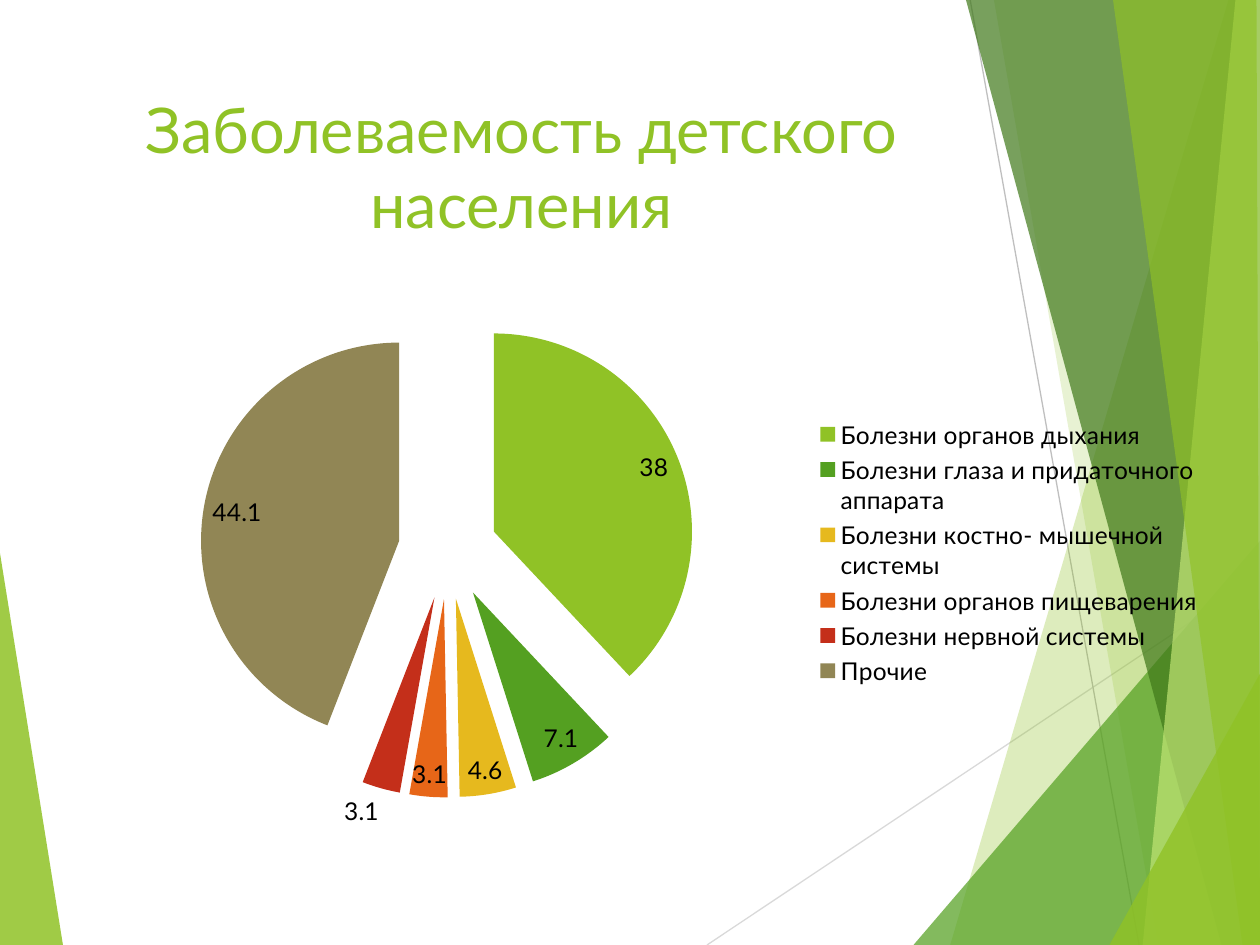
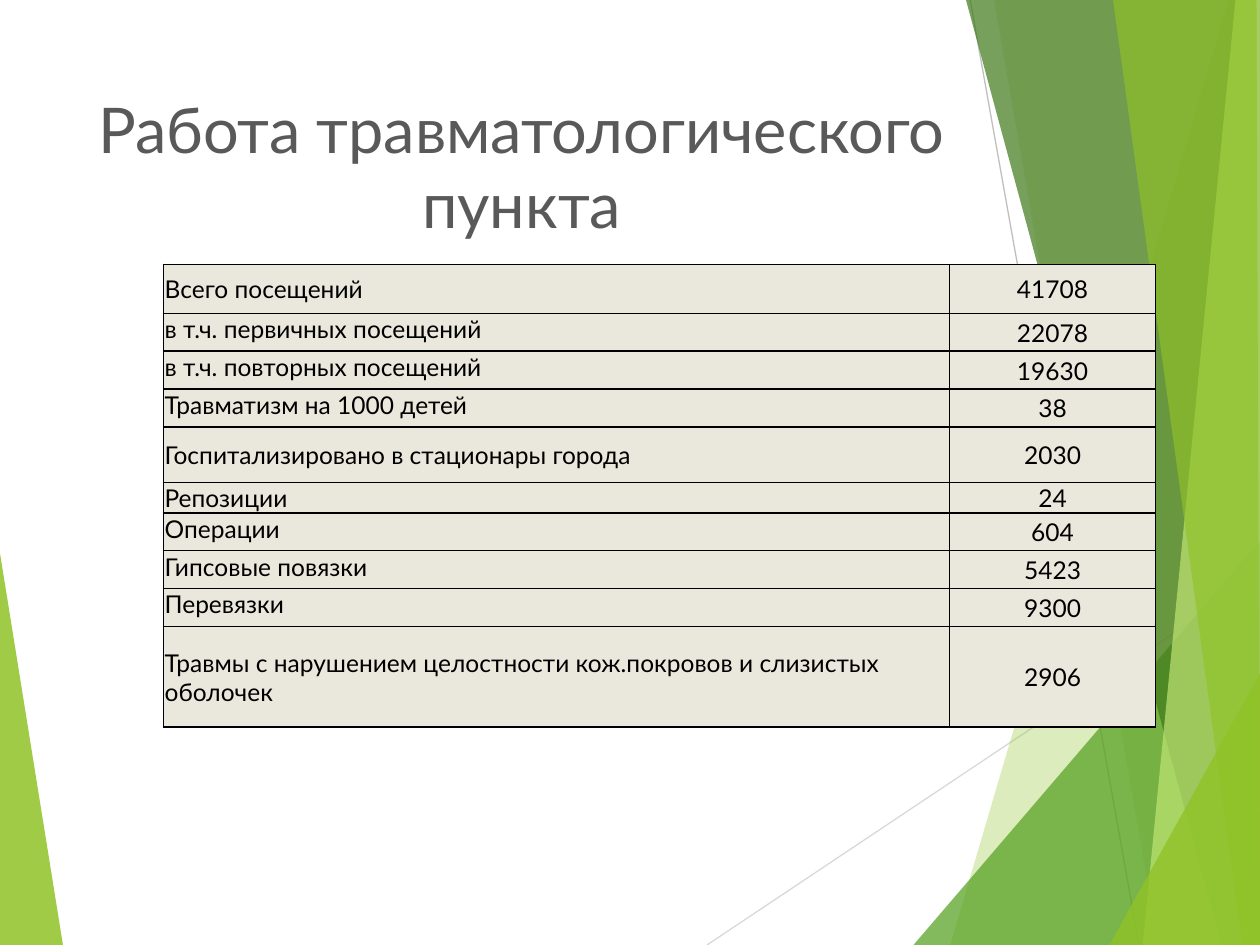
from typing import NamedTuple

from lxml.etree import SubElement
from pptx import Presentation
from pptx.chart.data import CategoryChartData
from pptx.dml.color import RGBColor
from pptx.enum.chart import XL_CHART_TYPE as ChartType
from pptx.enum.chart import XL_LABEL_POSITION as LabelPosition
from pptx.enum.chart import XL_LEGEND_POSITION as LegendPosition
from pptx.enum.text import MSO_ANCHOR as Anchor
from pptx.enum.text import PP_ALIGN as Align
from pptx.oxml import parse_xml
from pptx.oxml.ns import nsdecls, qn
from pptx.util import Pt

WIDTH, HEIGHT = 720, 540
FONT = "Lato"
LIME, GREEN, DARK_GREEN, PALE_LIME = "90C226", "54A021", "3F7819", "C0E474"
BLACK, GREY, CELL_FILL = "000000", "595959", "EAE8DC"
TITLE_SIZE, BODY_SIZE = 36, 14
TALL_ROW = 24
RIGHT_TOP, RIGHT_BOTTOM = (WIDTH, 0), (WIDTH, HEIGHT)


class Facet(NamedTuple):
    color: str
    opacity: int
    corners: list[tuple[float, float]]


class Ray(NamedTuple):
    color: str
    start: tuple[float, float]
    end: tuple[float, float]


class Disease(NamedTuple):
    name: str
    share: float
    color: str


class Indicator(NamedTuple):
    label: str
    value: str
    height: float = 21.6


LEFT_FACET = Facet(LIME, 85, [(0, 316), (35.5, HEIGHT), (0, HEIGHT)])
RAYS = [
    Ray("D9D9D9", (404, HEIGHT), (WIDTH, 329)),
    Ray("BFBFBF", (554.4, 0), (650.9, HEIGHT)),
]
RIGHT_FACETS = [
    Facet(LIME, 30, [(702, 0), (543, HEIGHT), RIGHT_BOTTOM, RIGHT_TOP]),
    Facet(LIME, 20, [(567.5, 0), (661.5, HEIGHT), RIGHT_BOTTOM, RIGHT_TOP]),
    Facet(GREEN, 72, [(522.5, HEIGHT), (WIDTH, 309), RIGHT_BOTTOM]),
    Facet(DARK_GREEN, 70, [(552, 0), (698.5, HEIGHT), RIGHT_BOTTOM, RIGHT_TOP]),
    Facet(PALE_LIME, 70, [(706.5, 0), (653, HEIGHT), RIGHT_BOTTOM, RIGHT_TOP]),
    Facet(LIME, 65, [(636, 0), (710, HEIGHT), RIGHT_BOTTOM, (718.5, 0)]),
    Facet(LIME, 80, [(634.5, HEIGHT), (WIDTH, 385), RIGHT_BOTTOM]),
]

DISEASES = [
    Disease("Болезни органов дыхания", 38, LIME),
    Disease("Болезни глаза и придаточного аппарата", 7.1, GREEN),
    Disease("Болезни костно- мышечной системы", 4.6, "E6B91E"),
    Disease("Болезни органов пищеварения", 3.1, "E76618"),
    Disease("Болезни нервной системы", 3.1, "C42F1A"),
    Disease("Прочие", 44.1, "918655"),
]

INDICATORS = [
    Indicator("Всего посещений", "41708", 28.1),
    Indicator("в т.ч. первичных посещений", "22078"),
    Indicator("в т.ч. повторных посещений", "19630"),
    Indicator("Травматизм на 1000 детей", "38"),
    Indicator("Госпитализировано в стационары города", "2030", 31.7),
    Indicator("Репозиции", "24", 16.6),
    Indicator("Операции", "604"),
    Indicator("Гипсовые повязки", "5423"),
    Indicator("Перевязки", "9300"),
    Indicator(
        "Травмы с нарушением целостности кож.покровов и слизистых оболочек",
        "2906", 57.6),
]


def rgb(color: str) -> RGBColor:
    return RGBColor.from_string(color)


def style_font(font, size: float, color: str) -> None:
    font.name = FONT
    font.size = Pt(size)
    font.color.rgb = rgb(color)


def add_facet(slide, facet: Facet) -> None:
    start, *others = facet.corners
    builder = slide.shapes.build_freeform(*start, scale=Pt(1))
    builder.add_line_segments(others)
    shape = builder.convert_to_shape()
    shape.shadow.inherit = False
    shape.line.fill.background()
    shape.fill.solid()
    shape.fill.fore_color.rgb = rgb(facet.color)
    fill_color = shape._element.spPr.find(f"{qn('a:solidFill')}/{qn('a:srgbClr')}")
    SubElement(fill_color, qn("a:alpha"), val=str(facet.opacity * 1000))


def add_ray(slide, ray: Ray) -> None:
    ends = [Pt(length) for length in (*ray.start, *ray.end)]
    connector = slide.shapes.add_connector(1, *ends)
    connector.line.color.rgb = rgb(ray.color)
    connector.line.width = Pt(0.75)
    SubElement(connector._element.spPr, qn("a:effectLst"))


def add_title(slide, text: str, color: str) -> None:
    title = slide.shapes.add_textbox(Pt(48), Pt(48), Pt(500), Pt(104))
    frame = title.text_frame
    frame.word_wrap = True
    frame.vertical_anchor = Anchor.TOP
    paragraph = frame.paragraphs[0]
    paragraph.text = text
    paragraph.alignment = Align.CENTER
    style_font(paragraph.font, TITLE_SIZE, color)


def add_faceted_slide(presentation, title: str, title_color: str):
    slide = presentation.slides.add_slide(presentation.slide_layouts[6])
    add_facet(slide, LEFT_FACET)
    for ray in RAYS:
        add_ray(slide, ray)
    for facet in RIGHT_FACETS:
        add_facet(slide, facet)
    add_title(slide, title, title_color)
    return slide


def place_plot(chart, x: float, y: float, width: float, height: float) -> None:
    """Fix the inner plot area, in fractions of the chart."""
    plot_area = chart._chartSpace.chart.plotArea
    for layout in plot_area.findall(qn("c:layout")):
        plot_area.remove(layout)
    plot_area.insert(0, parse_xml(
        f'<c:layout {nsdecls("c")}><c:manualLayout>'
        '<c:layoutTarget val="inner"/><c:xMode val="edge"/><c:yMode val="edge"/>'
        f'<c:x val="{x}"/><c:y val="{y}"/><c:w val="{width}"/><c:h val="{height}"/>'
        '</c:manualLayout></c:layout>'))


def add_disease_pie(slide) -> None:
    data = CategoryChartData()
    data.categories = [disease.name for disease in DISEASES]
    data.add_series("Series 1", [disease.share for disease in DISEASES])
    chart = slide.shapes.add_chart(
        ChartType.PIE, Pt(14.4), Pt(111.6), Pt(680.4), Pt(408.2), data).chart
    chart.has_title = False
    style_font(chart.font, 10, BLACK)
    place_plot(chart, 0.147, 0.096, 0.416, 0.801)

    chart.has_legend = True
    chart.legend.position = LegendPosition.RIGHT
    chart.legend.include_in_layout = False
    style_font(chart.legend.font, BODY_SIZE, BLACK)

    plot = chart.plots[0]
    plot.vary_by_categories = True
    series = plot.series[0]
    for index, disease in enumerate(DISEASES):
        fill = series.points[index].format.fill
        fill.solid()
        fill.fore_color.rgb = rgb(disease.color)
    series._element.find(qn("c:dPt")).addprevious(
        parse_xml(f'<c:explosion {nsdecls("c")} val="25"/>'))

    labels = series.data_labels
    labels.show_value = True
    labels.position = LabelPosition.BEST_FIT
    style_font(labels.font, BODY_SIZE, BLACK)


def add_borders(cell) -> None:
    properties = cell._tc.get_or_add_tcPr()
    for side in ("L", "R", "T", "B"):
        border = SubElement(properties, qn(f"a:ln{side}"), w=str(Pt(1)))
        SubElement(SubElement(border, qn("a:solidFill")), qn("a:srgbClr"), val=BLACK)


def fill_cell(cell, text: str, alignment: Align, anchor: Anchor) -> None:
    add_borders(cell)
    cell.fill.solid()
    cell.fill.fore_color.rgb = rgb(CELL_FILL)
    cell.margin_left = cell.margin_right = cell.margin_top = Pt(0.7)
    cell.margin_bottom = Pt(0)
    cell.vertical_anchor = anchor
    paragraph = cell.text_frame.paragraphs[0]
    paragraph.text = text
    paragraph.alignment = alignment
    style_font(paragraph.font, BODY_SIZE, BLACK)


def add_indicator_table(slide) -> None:
    column_widths = (449.3, 117.6)
    height = sum(indicator.height for indicator in INDICATORS)
    table = slide.shapes.add_table(
        len(INDICATORS), len(column_widths),
        Pt(93.4), Pt(151), Pt(sum(column_widths)), Pt(height)).table
    table.first_row = table.horz_banding = False
    for column, width in zip(table.columns, column_widths):
        column.width = Pt(width)
    for row, indicator in zip(table.rows, INDICATORS):
        row.height = Pt(indicator.height)
        label_cell, value_cell = row.cells
        label_anchor = Anchor.MIDDLE if indicator.height > TALL_ROW else Anchor.TOP
        fill_cell(label_cell, indicator.label, Align.LEFT, label_anchor)
        fill_cell(value_cell, indicator.value, Align.CENTER, Anchor.MIDDLE)


def main() -> None:
    presentation = Presentation()
    presentation.slide_width = Pt(WIDTH)
    presentation.slide_height = Pt(HEIGHT)
    add_disease_pie(add_faceted_slide(
        presentation, "Заболеваемость детского населения", LIME))
    add_indicator_table(add_faceted_slide(
        presentation, "Работа травматологического пункта", GREY))
    presentation.save("out.pptx")


if __name__ == "__main__":
    main()
